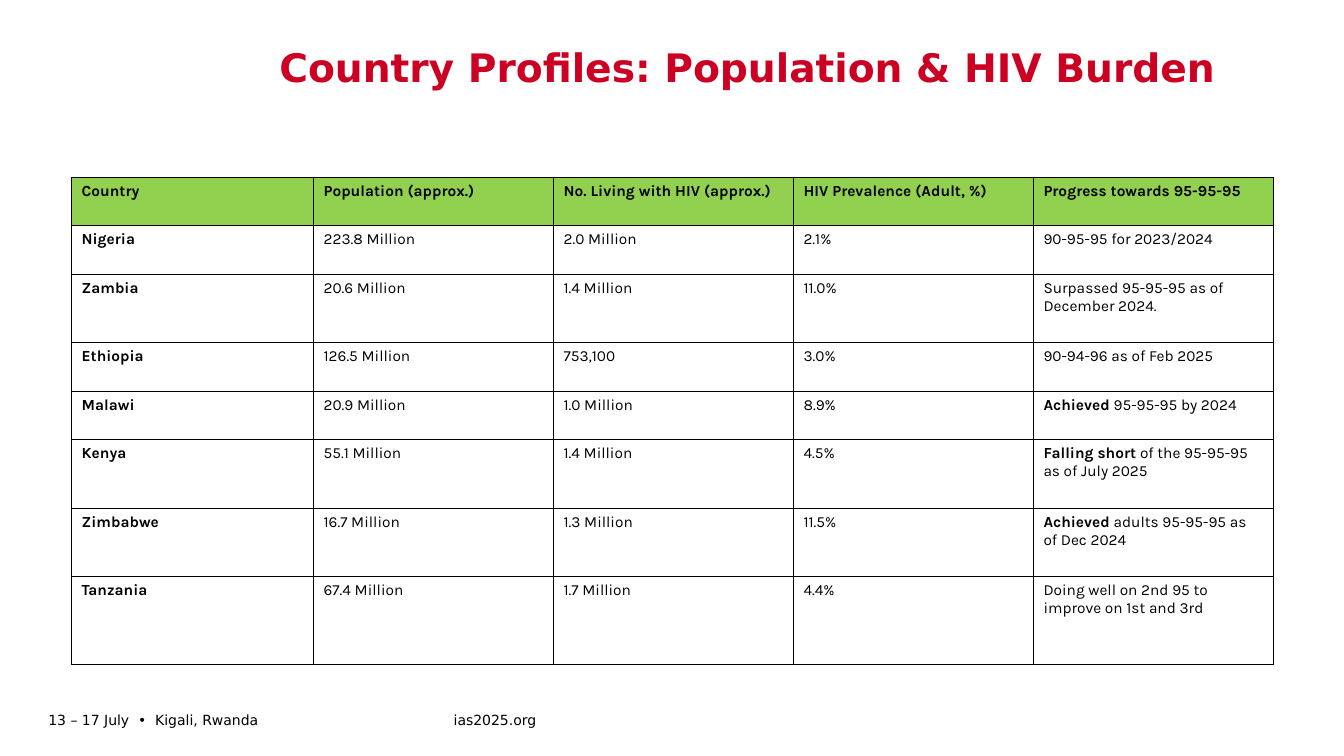
from dataclasses import dataclass
from typing import Any

import lxml.etree
import pptx
import pptx.dml.color
import pptx.enum.text
import pptx.oxml.ns
import pptx.util

Inches = pptx.util.Inches
Pt = pptx.util.Pt
Anchor = pptx.enum.text.MSO_ANCHOR


@dataclass(frozen=True)
class Theme:
    black: str = "000000"
    title_red: str = "CC0022"
    header_green: str = "92D050"
    display_font: str = "DejaVu Sans"
    table_font: str = "Karla"
    title_size: int = 28
    table_size: int = 11
    footer_size: int = 10
    border_width: float = 0.75


@dataclass(frozen=True)
class Label:
    text: str
    left: float
    top: float
    width: float
    height: float
    size: int
    color: str
    bold: bool = False
    anchor: Any = Anchor.MIDDLE
    line_spacing: float = 1.0


@dataclass(frozen=True)
class Country:
    name: str
    population: str
    living_with_hiv: str
    prevalence: str
    progress: str
    row_height: float = 0.48
    verdict: str = ""


THEME = Theme()

LABELS = [
    Label("13 – 17 July  •  Kigali, Rwanda", 0.48, 7.02, 4.02, 0.24,
          THEME.footer_size, THEME.black),
    Label("ias2025.org", 4.5, 7.02, 1.93, 0.24, THEME.footer_size, THEME.black),
    Label("Country Profiles: Population & HIV Burden", 2.77, 0.48, 10.08, 0.66,
          THEME.title_size, THEME.title_red, True, Anchor.TOP, 0.9),
]

HEADINGS = ["Country", "Population (approx.)", "No. Living with HIV (approx.)",
            "HIV Prevalence (Adult, %)", "Progress towards 95-95-95"]
HEADING_HEIGHT = 0.48
COLUMN_WIDTHS = [2.4] + [2.38] * 4

COUNTRIES = [
    Country("Nigeria", "223.8 Million", "2.0 Million", "2.1%", "90-95-95 for 2023/2024"),
    Country("Zambia", "20.6 Million", "1.4 Million", "11.0%",
            "Surpassed 95-95-95 as of December 2024.", 0.68),
    Country("Ethiopia", "126.5 Million", "753,100", "3.0%", "90-94-96 as of Feb 2025"),
    Country("Malawi", "20.9 Million", "1.0 Million", "8.9%", " 95-95-95 by 2024",
            verdict="Achieved"),
    Country("Kenya", "55.1 Million", "1.4 Million", "4.5%",
            " of the 95-95-95 as of July 2025", 0.68, "Falling short"),
    Country("Zimbabwe", "16.7 Million", "1.3 Million", "11.5%",
            " adults 95-95-95 as of Dec 2024", 0.68, "Achieved"),
    Country("Tanzania", "67.4 Million", "1.7 Million", "4.4%",
            "Doing well on 2nd 95 to improve on 1st and 3rd", 0.87),
]


def apply_format(target: Any, values: dict[str, Any]) -> None:
    for name, value in values.items():
        setattr(target, name, value)


def add_span(para: Any, text: str, font: str, size: int, color: str, bold: bool) -> None:
    span = para.add_run()
    span.text = text
    apply_format(span.font, {"name": font, "size": Pt(size), "bold": bold})
    span.font.color.rgb = pptx.dml.color.RGBColor.from_string(color)


def add_label(page: Any, label: Label) -> None:
    box = page.shapes.add_textbox(Inches(label.left), Inches(label.top),
                                  Inches(label.width), Inches(label.height))
    apply_format(box.text_frame, {
        "word_wrap": True, "vertical_anchor": label.anchor,
        "margin_left": 0, "margin_right": 0, "margin_top": 0, "margin_bottom": 0,
    })
    para = box.text_frame.paragraphs[0]
    para.line_spacing = label.line_spacing
    add_span(para, label.text, THEME.display_font, label.size, label.color, label.bold)


def add_borders(cell: Any) -> None:
    qn = pptx.oxml.ns.qn
    properties = cell._tc.get_or_add_tcPr()
    for side in ("lnL", "lnR", "lnT", "lnB"):
        line = lxml.etree.SubElement(properties, qn(f"a:{side}"),
                                     w=str(Pt(THEME.border_width)))
        fill = lxml.etree.SubElement(line, qn("a:solidFill"))
        lxml.etree.SubElement(fill, qn("a:srgbClr"), val=THEME.black)


def fill_cell(cell: Any, spans: list[tuple[str, bool]], is_heading: bool) -> None:
    add_borders(cell)
    if is_heading:
        cell.fill.solid()
        cell.fill.fore_color.rgb = pptx.dml.color.RGBColor.from_string(THEME.header_green)
    else:
        cell.fill.background()
    apply_format(cell, {
        "vertical_anchor": Anchor.TOP,
        "margin_left": Inches(0.1), "margin_right": Inches(0.1),
        "margin_top": Inches(0.05), "margin_bottom": Inches(0.05),
    })
    para = cell.text_frame.paragraphs[0]
    for text, bold in spans:
        add_span(para, text, THEME.table_font, THEME.table_size, THEME.black, bold)


def country_cells(country: Country) -> list[list[tuple[str, bool]]]:
    figures = [country.population, country.living_with_hiv, country.prevalence]
    verdict = [(country.verdict, True)] if country.verdict else []
    return [[(country.name, True)], *[[(figure, False)] for figure in figures],
            verdict + [(country.progress, False)]]


def add_country_table(page: Any) -> None:
    rows = [[[(heading, True)] for heading in HEADINGS]]
    rows += [country_cells(country) for country in COUNTRIES]
    heights = [HEADING_HEIGHT] + [country.row_height for country in COUNTRIES]
    frame = page.shapes.add_table(len(rows), len(HEADINGS), Inches(0.71), Inches(1.76),
                                  Inches(sum(COLUMN_WIDTHS)), Inches(sum(heights)))
    table = frame.table
    table.horz_banding = False
    for column, width in zip(table.columns, COLUMN_WIDTHS):
        column.width = Inches(width)
    for index, (row, height) in enumerate(zip(rows, heights)):
        table.rows[index].height = Inches(height)
        for cell, spans in zip(table.rows[index].cells, row):
            fill_cell(cell, spans, index == 0)


def main() -> None:
    deck = pptx.Presentation()
    apply_format(deck, {"slide_width": Inches(13.33), "slide_height": Inches(7.5)})
    page = deck.slides.add_slide(deck.slide_layouts[6])
    for label in LABELS:
        add_label(page, label)
    add_country_table(page)
    deck.save("out.pptx")


if __name__ == "__main__":
    main()
